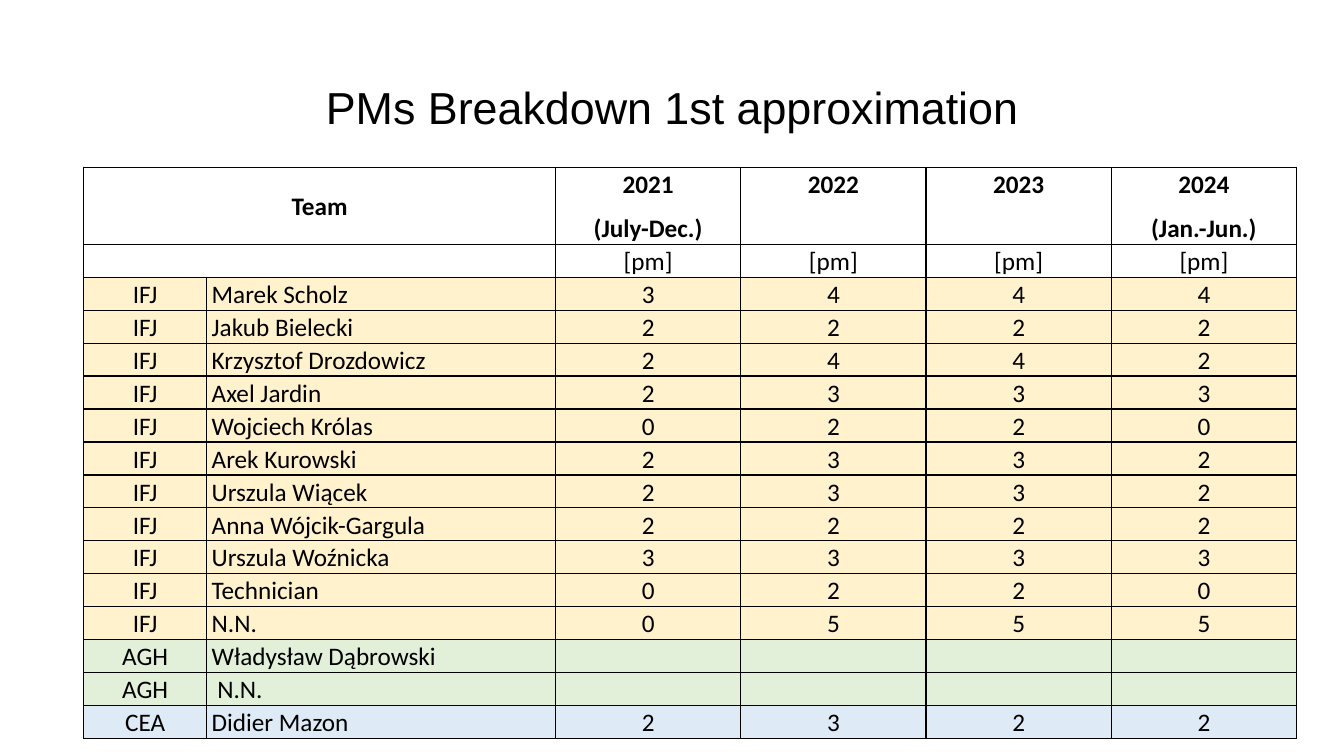
from lxml import etree
from pptx import Presentation, util as u
from pptx.dml.color import RGBColor
from pptx.enum import text as t
from pptx.oxml.ns import qn

MID, LEFT = t.PP_ALIGN.CENTER, t.PP_ALIGN.LEFT
TOP, CENTRE, BASE = t.MSO_ANCHOR.TOP, t.MSO_ANCHOR.MIDDLE, t.MSO_ANCHOR.BOTTOM

FILLS = {"IFJ": "FFF2CC", "AGH": "E2EFD9", "CEA": "DEEAF6"}
YEARS = ["2021\n(July-Dec.)", "2022", "2023", "2024\n(Jan.-Jun.)"]
STAFF = [
    ("IFJ", "Marek Scholz", "3444"),
    ("IFJ", "Jakub Bielecki", "2222"),
    ("IFJ", "Krzysztof Drozdowicz", "2442"),
    ("IFJ", "Axel Jardin", "2333"),
    ("IFJ", "Wojciech Królas", "0220"),
    ("IFJ", "Arek Kurowski", "2332"),
    ("IFJ", "Urszula Wiącek", "2332"),
    ("IFJ", "Anna Wójcik-Gargula", "2222"),
    ("IFJ", "Urszula Woźnicka", "3333"),
    ("IFJ", "Technician", "0220"),
    ("IFJ", "N.N.", "0555"),
    ("AGH", "Władysław Dąbrowski", ""),
    ("AGH", " N.N.", ""),
    ("CEA", "Didier Mazon", "2322"),
]


def color(code):
    return RGBColor.from_string(code)


def write(frame, words, font="Calibri", size=18, bold=False, align=MID,
          line=None, after=None):
    frame.text = words
    for par in frame.paragraphs:
        par.alignment = align
        par.line_spacing = line
        par.space_after = after
        for run in par.runs:
            run.font.name = font
            run.font.size = u.Pt(size)
            run.font.bold = bold
            run.font.color.rgb = color("000000")


def border(cell):
    props = cell._tc.get_or_add_tcPr()
    for i, side in enumerate(("lnL", "lnR", "lnT", "lnB")):
        edge = etree.Element(qn("a:" + side), w=str(u.Pt(1)))
        fill = etree.SubElement(edge, qn("a:solidFill"))
        etree.SubElement(fill, qn("a:srgbClr"), val="000000")
        props.insert(i, edge)


def put(cell, words, anchor=TOP, **form):
    cell.vertical_anchor = anchor
    if words:
        write(cell.text_frame, words, line=1.07, after=u.Pt(8), **form)


def title(slide, x, y, w, h):
    box = slide.shapes.title
    box.left, box.top, box.width, box.height = map(u.Inches, (x, y, w, h))
    frame = box.text_frame
    frame.vertical_anchor = BASE
    frame.margin_bottom = 0
    write(frame, "PMs Breakdown 1st approximation", font="Arial", size=32)


def effort(slide, x, y, w, h):
    count = len(STAFF) + 2
    grid = slide.shapes.add_table(count, 6, *map(u.Inches, (x, y, w, h))).table
    grid.first_row = grid.horz_banding = False

    # Column widths and row heights
    team, name, head = 1.22, 3.46, 0.76
    year = (w - team - name) / len(YEARS)
    for col, wide in zip(grid.columns, [team, name] + [year] * len(YEARS)):
        col.width = u.Inches(wide)
    for i, row in enumerate(grid.rows):
        row.height = u.Inches((h - head) / (count - 1) if i else head)

    # Margins, fills and borders
    for i, row in enumerate(grid.rows):
        for cell in row.cells:
            cell.margin_left = cell.margin_right = u.Inches(0.05)
            cell.margin_top = cell.margin_bottom = 0
            if i < 2:
                cell.fill.background()
            else:
                cell.fill.solid()
                cell.fill.fore_color.rgb = color(FILLS[STAFF[i - 2][0]])
            border(cell)

    # Heading rows
    for i in range(2):
        grid.cell(i, 0).merge(grid.cell(i, 1))
    put(grid.cell(0, 0), "Team", CENTRE, bold=True)
    for j, label in enumerate(YEARS, 2):
        put(grid.cell(0, j), label, bold=True)
        put(grid.cell(1, j), "[pm]")

    # Staff rows
    for i, (unit, person, months) in enumerate(STAFF, 2):
        last = unit == "CEA"
        put(grid.cell(i, 0), unit, CENTRE if last else TOP)
        put(grid.cell(i, 1), person, CENTRE if last else TOP, align=LEFT)
        for j, value in enumerate(months, 2):
            put(grid.cell(i, j), value, CENTRE if last else BASE)


def main():
    deck = Presentation()
    deck.slide_width, deck.slide_height = u.Inches(13.33), u.Inches(7.5)
    slide = deck.slides.add_slide(deck.slide_layouts[5])
    title(slide, 2.17, 0.69, 9, 0.63)
    effort(slide, 0.83, 1.66, 12.03, 5.57)
    deck.save("out.pptx")


if __name__ == "__main__":
    main()
